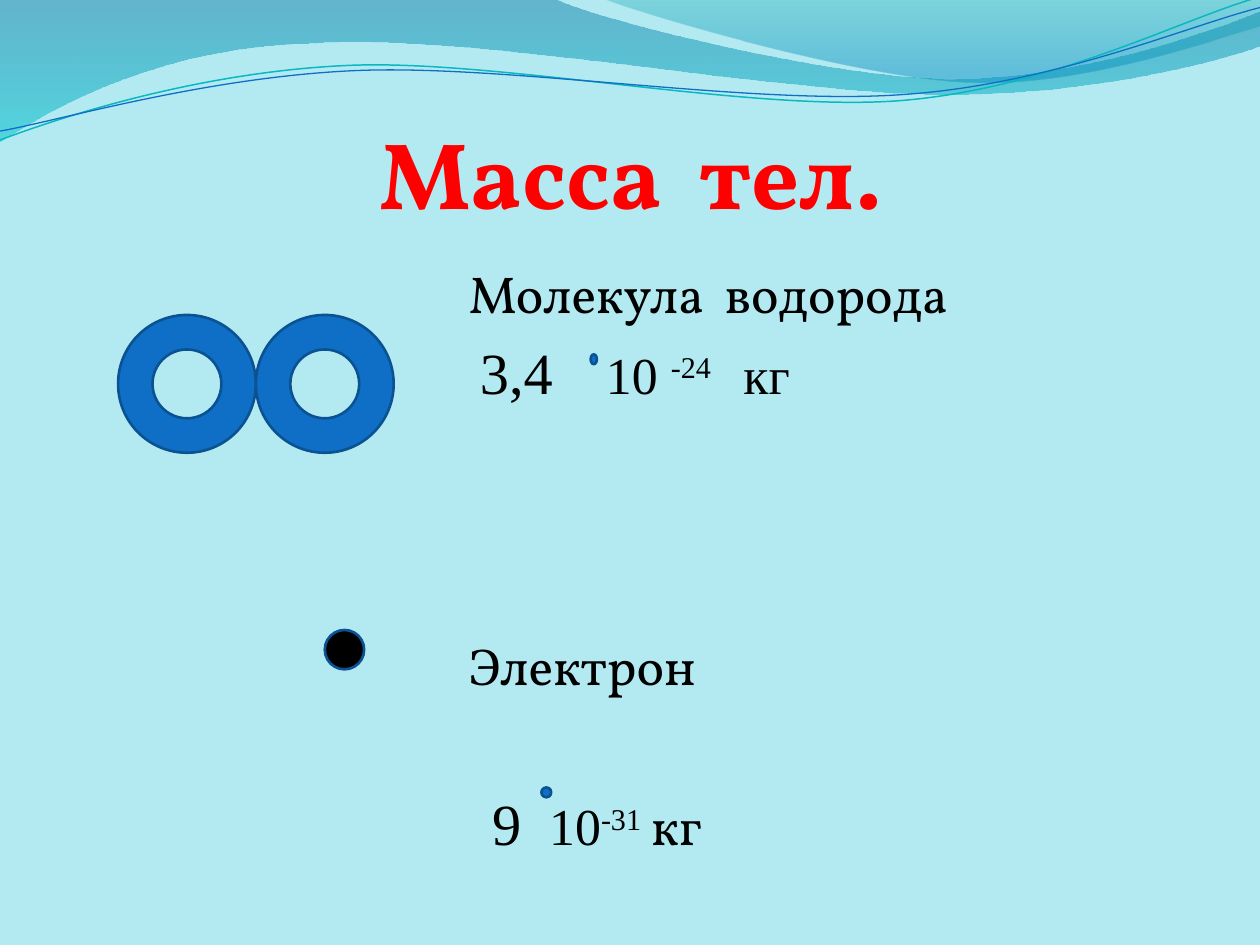
import pptx
import pptx.dml.color
import pptx.enum.shapes
import pptx.enum.text
import pptx.oxml.ns
import pptx.util
from lxml import etree

Pt = pptx.util.Pt
RGBColor = pptx.dml.color.RGBColor
MSO_SHAPE = pptx.enum.shapes.MSO_SHAPE
PP_ALIGN = pptx.enum.text.PP_ALIGN
qn = pptx.oxml.ns.qn

BACKGROUND = RGBColor(0xB3, 0xEA, 0xF2)
BLACK = RGBColor(0, 0, 0)
RED = RGBColor(0xFF, 0, 0)
BLUE = RGBColor(0x0F, 0x6F, 0xC6)
DARK_BLUE = RGBColor(0x0B, 0x52, 0x92)
TEAL = RGBColor(0x0A, 0xB8, 0xBF)
WAVE_BACK = ((0, RGBColor(0, 0x74, 0xA1), 45), (1, RGBColor(0, 0xC6, 0xCF), 55))
WAVE_FRONT = ((0, RGBColor(0, 0xA1, 0xA9), 30), (0.8, RGBColor(0, 0x8B, 0xBF), 45))

SERIF = "Times New Roman"
VOLLKORN = "Vollkorn"


def bend_segments(sp, segments):
    lines = iter(list(sp.element.iter(qn("a:lnTo"))))
    for segment in segments:
        parts = [next(lines) for _ in segment]
        if len(parts) == 3:
            curve = etree.Element(qn("a:cubicBezTo"))
            parts[0].addprevious(curve)
            for part in parts:
                curve.append(part[0])
                part.getparent().remove(part)


def add_path(s, start, segments, close):
    points = [(Pt(x), Pt(y)) for segment in segments for x, y in segment]
    builder = s.shapes.build_freeform(Pt(start[0]), Pt(start[1]))
    builder.add_line_segments(points, close=close)
    sp = builder.convert_to_shape()
    sp.shadow.inherit = False
    bend_segments(sp, segments)
    return sp


def add_wave(s, start, segments, stops):
    sp = add_path(s, start, segments, True)
    sp.line.fill.background()
    sp.fill.gradient()
    sp.fill.gradient_angle = 270
    for stop, (position, color, _) in zip(sp.fill.gradient_stops, stops):
        stop.position = position
        stop.color.rgb = color
    colors = sp.element.spPr.find(qn("a:gradFill")).iter(qn("a:srgbClr"))
    for node, (_, _, opacity) in zip(colors, stops):
        etree.SubElement(node, qn("a:alpha")).set("val", str(opacity * 1000))


def add_ripple(s, start, segments, color, width):
    sp = add_path(s, start, segments, False)
    sp.fill.background()
    sp.line.color.rgb = color
    sp.line.width = Pt(width)


def add_particle(s, kind, left, top, width, height, color=BLUE):
    sp = s.shapes.add_shape(kind, Pt(left), Pt(top), Pt(width), Pt(height))
    sp.shadow.inherit = False
    sp.fill.solid()
    sp.fill.fore_color.rgb = color
    sp.line.color.rgb = DARK_BLUE
    sp.line.width = Pt(1.5)


def add_text_box(s, left, top, width, height):
    tf = s.shapes.add_textbox(Pt(left), Pt(top), Pt(width), Pt(height)).text_frame
    tf.word_wrap = True
    tf.margin_left = tf.margin_right = tf.margin_top = tf.margin_bottom = Pt(3.6)
    return tf


def add_run(p, text, size=29.6, font=SERIF, color=BLACK, bold=False, superscript=False):
    r = p.add_run()
    r.text = text
    r.font.size = Pt(size)
    r.font.name = font
    r.font.color.rgb = color
    r.font.bold = bold
    if superscript:
        r.font._element.set("baseline", "30000")


def set_tabs(p, stops):
    tabs = etree.SubElement(p._p.get_or_add_pPr(), qn("a:tabLst"))
    for stop in stops:
        etree.SubElement(tabs, qn("a:tab"), pos=str(Pt(stop)), algn="l")


def add_waves(s):
    add_wave(s, (0, 0), [
        [(317, -0.7)],
        [(343, 12), (478, 45), (546, 45)],
        [(614, 45), (690, 19), (720, 6.5)],
        [(721, 26)],
        [(708, 32), (626, 55), (537, 54)],
        [(448, 54), (275, 20), (185, 24.5)],
        [(93, 26), (33, 60), (-0.7, 81.4)],
    ], WAVE_BACK)
    add_wave(s, (345, -0.7), [
        [(366, 8), (491, 45), (554, 47)],
        [(616, 50), (692, 23), (720, 15)],
        [(720, 0)],
    ], WAVE_FRONT)
    add_ripple(s, (0, 80), [
        [(34.6, 67), (113.8, 41), (199.4, 37.4)],
        [(284.4, 33.8), (427, 64), (513.4, 57.6)],
        [(599.8, 51), (675.4, 10.8), (718.6, -1.4)],
    ], TEAL, 0.85)
    add_ripple(s, (0, 74.9), [
        [(33.8, 69), (118, 43.9), (203.8, 40.3)],
        [(290.2, 36.7), (429.8, 60.5), (516.2, 54)],
        [(601.9, 48.2), (677.5, 15.1), (720, 4.3)],
    ], BLUE, 0.75)


def add_masses(s):
    vollkorn = {"font": VOLLKORN}
    large = {"size": 33.3}
    raised = {"superscript": True}
    lines = [
        (0, [], [("Молекула  водорода", vollkorn)]),
        (6.7, [6.5, 78.5, 157], [("\t3,4", large), ("\t10 ", {}), ("-24", raised), ("\tкг", {})]),
        (130.4, [], [("Электрон", vollkorn)]),
        (52.2, [13.5, 46], [("\t9", large), ("\t10", {}), ("-31", raised), (" кг", vollkorn)]),
    ]
    tf = add_text_box(s, 264.2, 146.1, 296.6, 337.7)
    for i, (gap, stops, runs) in enumerate(lines):
        p = tf.add_paragraph() if i else tf.paragraphs[0]
        p.space_before = Pt(gap)
        if stops:
            set_tabs(p, stops)
        for text, style in runs:
            add_run(p, text, **style)


def add_title(s):
    p = add_text_box(s, 191.5, 62.2, 337.7, 72.7).paragraphs[0]
    p.alignment = PP_ALIGN.CENTER
    add_run(p, "Масса  тел.", size=54, font=VOLLKORN, color=RED, bold=True)


def main():
    prs = pptx.Presentation()
    prs.slide_width, prs.slide_height = Pt(720), Pt(540)
    s = prs.slides.add_slide(prs.slide_layouts[6])
    s.background.fill.solid()
    s.background.fill.fore_color.rgb = BACKGROUND
    add_waves(s)
    add_masses(s)
    add_title(s)
    atom = 78.75
    for i in range(2):
        add_particle(s, MSO_SHAPE.DONUT, 67.5 + i * atom, 180, atom, atom)
    dot = MSO_SHAPE.FLOWCHART_CONNECTOR
    add_particle(s, dot, 185.6, 360, 22.5, 22.5, BLACK)
    add_particle(s, dot, 337.5, 202.5, 3.6, 5.6)
    add_particle(s, dot, 309.4, 450, 5.6, 5.6)
    prs.save("out.pptx")


if __name__ == "__main__":
    main()
